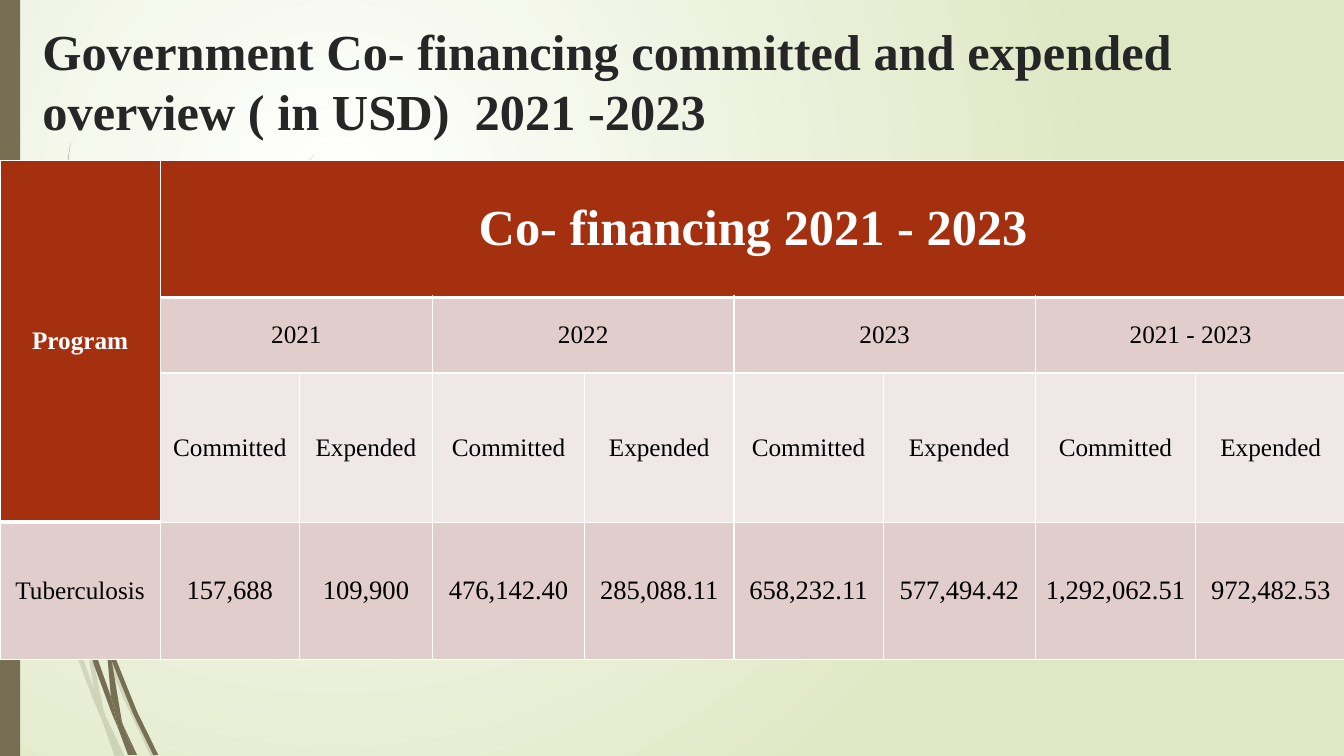
from pptx import Presentation
from pptx.dml.color import RGBColor as Rgb
from pptx.enum.shapes import MSO_SHAPE as Geo
from pptx.enum.text import MSO_ANCHOR as Anchor, PP_ALIGN as Align
from pptx.oxml import parse_xml
from pptx.oxml.ns import nsdecls, qn
from pptx.util import Inches, Pt

WIDE, HIGH = Inches(13.33), Inches(7.5)

THEME = {
    "font": "Times New Roman",
    "ink": "262626", "black": "000000", "white": "FFFFFF", "sage": "DFE8C4",
    "olive": "766F54", "rust": "A53010", "rose": "E1CDCC", "blush": "F0E8E7",
    "big": 36, "label": 18, "value": 19,
}

COLS = (1.59, 1.38, 1.32, 1.51, 1.48, 1.48, 1.51, 1.59, 1.49)
ROWS = (1.36, 0.75, 1.48, 1.36)
SPANS = ("2021", "2022", "2023", "2021 - 2023")
FIGURES = ("157,688", "109,900", "476,142.40", "285,088.11",
           "658,232.11", "577,494.42", "1,292,062.51", "972,482.53")

# Grass blades: corner points in hundredths of an inch
PALE = (
    ((92, 607), (88, 596), (88, 610), (123, 694), (150, 751), (155, 751), (127, 692)),
    ((119, 751), (124, 751), (105, 711)),
    ((93, 683), (70, 619), (31, 469), (17, 376), (11, 350), (28, 470), (65, 621),
     (92, 693), (101, 714), (99, 707)),
    ((84, 599), (87, 646), (93, 683), (96, 692), (105, 711), (103, 706), (91, 646),
     (88, 610), (88, 608)),
    ((88, 584), (110, 462), (160, 349), (229, 245), (268, 198), (290, 175), (312, 154),
     (312, 153), (289, 175), (268, 197), (228, 244), (158, 348), (107, 461), (85, 584),
     (85, 586), (88, 596)),
    ((101, 714), (114, 751), (119, 751)),
    ((96, 692), (93, 683), (99, 707), (101, 714), (119, 751), (105, 711)),
)
DARK = (
    ((113, 649), (110, 641), (111, 656), (132, 708), (152, 749), (157, 749), (136, 706)),
    ((110, 691), (98, 657), (72, 556), (64, 505), (57, 477), (68, 557), (93, 659),
     (111, 708), (117, 722), (116, 717)),
    ((60, 472), (58, 453), (54, 349), (58, 245), (63, 193), (70, 141), (62, 193),
     (56, 245), (52, 349), (55, 449)),
    ((133, 749), (136, 749), (122, 719)),
    ((117, 722), (127, 749), (131, 749)),
    ((106, 645), (110, 691), (116, 706), (122, 719), (121, 716), (111, 656), (109, 651)),
    ((116, 706), (110, 691), (116, 717), (117, 722), (130, 749), (133, 749), (122, 719)),
)


def tint(name):
    return Rgb.from_string(THEME[name])


def apply(obj, vals):
    for key, val in vals.items():
        setattr(obj, key, val)


def write(frame, text, size, color, bold, align):
    part = frame.paragraphs[0]
    part.alignment = align
    run = part.add_run()
    run.text = text
    apply(run.font, {"name": THEME["font"], "size": Pt(THEME[size]), "bold": bold})
    run.font.color.rgb = tint(color)


def paint(shape, color, alpha=None):
    shape.shadow.inherit = False
    shape.fill.solid()
    shape.fill.fore_color.rgb = tint(color)
    shape.line.fill.background()
    if alpha:
        node = shape.element.spPr.find(".//" + qn("a:srgbClr"))
        node.append(parse_xml(f'<a:alpha {nsdecls("a")} val="{alpha * 1000}"/>'))


def backdrop(slide):
    fill = slide.background.fill
    fill.gradient()
    for stop, name in zip(fill.gradient_stops, ("white", "sage")):
        stop.color.rgb = tint(name)
    grad = slide.element.find(".//" + qn("a:gradFill"))
    grad.replace(grad.find(qn("a:lin")), parse_xml(
        f'<a:path {nsdecls("a")} path="circle">'
        '<a:fillToRect l="50000" t="50000" r="100000" b="100000"/></a:path>'))


def blade(slide, points, alpha=None):
    pen = slide.shapes.build_freeform(*points[0], scale=Inches(0.01))
    pen.add_line_segments(points[1:], close=True)
    paint(pen.convert_to_shape(), "olive", alpha)


def heading(slide, text):
    box = slide.shapes.title
    apply(box, {"left": int(WIDE * 0.024), "top": int(HIGH * 0.008),
                "width": int(WIDE * 0.949), "height": int(HIGH * 0.185)})
    apply(box.text_frame, {"word_wrap": True, "vertical_anchor": Anchor.BOTTOM})
    write(box.text_frame, text, "big", "ink", True, Align.LEFT)


def edges(cell, top, bottom):
    props = cell._tc.get_or_add_tcPr()
    for side, width in zip("LRTB", (1, 1, top, bottom)):
        props.append(parse_xml(
            f'<a:ln{side} {nsdecls("a")} w="{Pt(width)}"><a:solidFill>'
            f'<a:srgbClr val="{THEME["white"]}"/></a:solidFill></a:ln{side}>'))


def put(cell, text, size="label", color="black", bold=False):
    write(cell.text_frame, text, size, color, bold, Align.CENTER)


def grid(slide):
    frame = slide.shapes.add_table(len(ROWS), len(COLS), 0, Inches(1.59),
                                   Inches(sum(COLS)), Inches(sum(ROWS)))
    table = frame.table
    for col, size in zip(table.columns, COLS):
        col.width = Inches(size)
    for row, size in zip(table.rows, ROWS):
        row.height = Inches(size)

    # Fills, margins and borders, thick below the header cells
    for r in range(len(ROWS)):
        for c in range(len(COLS)):
            cell = table.cell(r, c)
            head = r == 0 or (c == 0 and r < 3)
            under = (r, c > 0) in ((1, True), (3, False))
            edges(cell, 3 if under else 1, 3 if head else 1)
            apply(cell, {"vertical_anchor": Anchor.MIDDLE,
                         "margin_left": Inches(0.05), "margin_right": Inches(0.05)})
            cell.fill.solid()
            name = "rust" if head else "blush" if r == 2 else "rose"
            cell.fill.fore_color.rgb = tint(name)

    # Header cells
    table.cell(0, 0).merge(table.cell(2, 0))
    table.cell(0, 1).merge(table.cell(0, 8))
    put(table.cell(0, 0), "Program", "label", "white", True)
    put(table.cell(0, 1), "Co- financing 2021 - 2023", "big", "white", True)
    for i, span in enumerate(SPANS):
        c = 1 + 2 * i
        table.cell(1, c).merge(table.cell(1, c + 1))
        put(table.cell(1, c), span)
        put(table.cell(2, c), "Committed")
        put(table.cell(2, c + 1), "Expended")

    # Figures
    put(table.cell(3, 0), "Tuberculosis")
    for c, figure in enumerate(FIGURES, 1):
        put(table.cell(3, c), figure, "value")


def main():
    deck = Presentation()
    apply(deck, {"slide_width": WIDE, "slide_height": HIGH})
    slide = deck.slides.add_slide(deck.slide_layouts[0])
    sub = slide.placeholders[1].element
    sub.getparent().remove(sub)

    backdrop(slide)
    for points in PALE:
        blade(slide, points, 20)
    for points in DARK:
        blade(slide, points)
    bar = slide.shapes.add_shape(Geo.RECTANGLE, 0, 0, int(WIDE * 0.015), HIGH)
    paint(bar, "olive")
    heading(slide, "Government Co- financing committed and expended  "
                   "overview ( in USD)  2021 -2023")
    grid(slide)
    deck.save("out.pptx")


if __name__ == "__main__":
    main()
